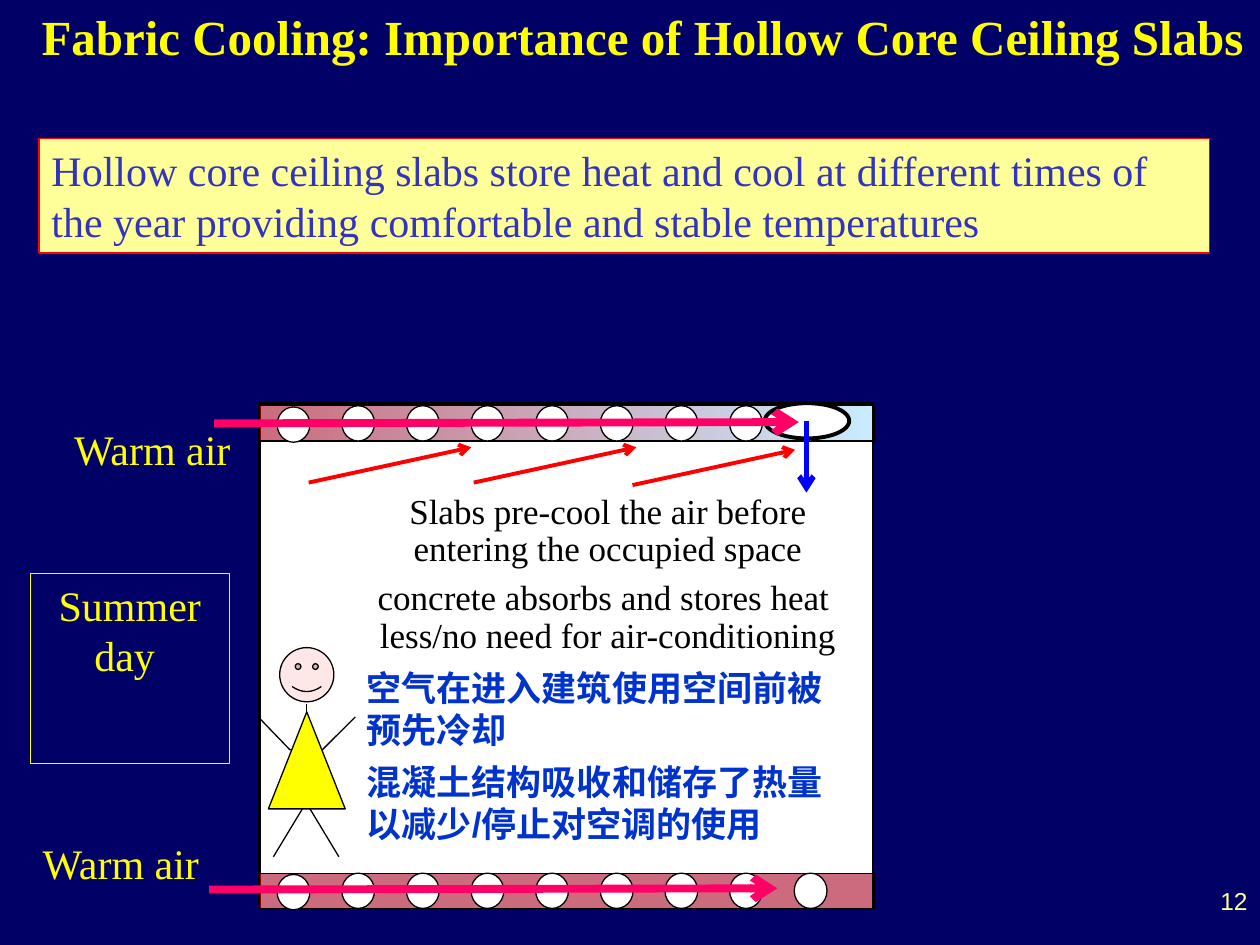
from dataclasses import dataclass
from typing import NamedTuple, Optional

from lxml.etree import SubElement
from pptx import Presentation
from pptx.dml.color import RGBColor
from pptx.enum.shapes import MSO_CONNECTOR, MSO_SHAPE as Preset
from pptx.enum.text import MSO_ANCHOR, PP_ALIGN as Align
from pptx.oxml.ns import qn
from pptx.util import Inches, Pt

COLUMNS, ROWS = 100, 75


@dataclass(frozen=True)
class Theme:
    night: str = "000066"
    yellow: str = "FFFF00"
    cream: str = "FFFF99"
    white: str = "FFFFFF"
    black: str = "000000"
    red: str = "FF0000"
    pink: str = "FF0066"
    blue: str = "0000FF"
    concrete: str = "95DCFF"
    skin: str = "FFE7E7"
    violet: str = "3235BC"
    chinese: str = "0033CC"
    serif: str = "Times New Roman"
    sans: str = "Arial"
    title: int = 28
    label: int = 24
    body: int = 20
    number: int = 14
    thin: float = 0.75


class Cell(NamedTuple):
    col: float
    row: float
    cols: float
    rows: float


class Point(NamedTuple):
    col: float
    row: float


class Flow(NamedTuple):
    start: Point
    end: Point
    color: str
    width: float
    arrow: bool = True


class Words(NamedTuple):
    text: str
    size: int
    color: str
    font: str
    bold: bool = False
    align: Align = Align.LEFT


T = Theme()
deck = Presentation()
deck.slide_width, deck.slide_height = Inches(10), Inches(7.5)
slide = deck.slides.add_slide(deck.slide_layouts[6])
slide.background.fill.solid()
slide.background.fill.fore_color.rgb = RGBColor.from_string(T.night)


def across(cols: float) -> int:
    return round(deck.slide_width * cols / COLUMNS)


def down(rows: float) -> int:
    return round(deck.slide_height * rows / ROWS)


def place(cell: Cell) -> tuple:
    return across(cell.col), down(cell.row), across(cell.cols), down(cell.rows)


def outline(item, color: str, width: float) -> None:
    item.line.color.rgb = RGBColor.from_string(color)
    item.line.width = Pt(width)


def draw(preset: Preset, cell: Cell, fill: Optional[str], line: str = T.black, width: float = T.thin):
    figure = slide.shapes.add_shape(preset, *place(cell))
    figure.shadow.inherit = False
    if fill:
        figure.fill.solid()
        figure.fill.fore_color.rgb = RGBColor.from_string(fill)
    else:
        figure.fill.background()
    outline(figure, line, width)
    return figure


def fade(figure, *opacities: int) -> None:
    fill = figure._element.spPr.find(qn("a:gradFill"))
    if fill is None:
        fill = figure._element.spPr.find(qn("a:solidFill"))
    for color, opacity in zip(fill.iter(qn("a:srgbClr")), opacities):
        SubElement(color, qn("a:alpha")).set("val", str(opacity * 1000))


def connect(flow: Flow) -> None:
    start, end = flow.start, flow.end
    wire = slide.shapes.add_connector(
        MSO_CONNECTOR.STRAIGHT, across(start.col), down(start.row), across(end.col), down(end.row))
    outline(wire, flow.color, flow.width)
    if flow.arrow:
        SubElement(wire.line._get_or_add_ln(), qn("a:tailEnd")).set("type", "arrow")
    SubElement(wire._element.spPr, qn("a:effectLst"))


def write(holder, paragraphs: list[Words], inset: Point = Point(1, 0.5),
          spacing: Optional[float] = None, before: float = 0) -> None:
    frame = holder.text_frame
    frame.word_wrap = True
    frame.vertical_anchor = MSO_ANCHOR.TOP
    frame.margin_left = frame.margin_right = across(inset.col)
    frame.margin_top = frame.margin_bottom = down(inset.row)
    for index, words in enumerate(paragraphs):
        paragraph = frame.add_paragraph() if index else frame.paragraphs[0]
        paragraph.alignment = words.align
        paragraph.space_before = Pt(before)
        if spacing and words.align == Align.CENTER:
            paragraph.line_spacing = spacing
        run = paragraph.add_run()
        run.text = words.text
        run.font.size, run.font.name, run.font.bold = Pt(words.size), words.font, words.bold
        run.font.color.rgb = RGBColor.from_string(words.color)


def text_box(cell: Cell):
    return slide.shapes.add_textbox(*place(cell))


def draw_slab(row: float, cooling: bool) -> None:
    draw(Preset.RECTANGLE, Cell(20.7, row, 48.7, 2.8), T.concrete)
    heat = draw(Preset.RECTANGLE, Cell(20.6, row, 48.7, 2.8), T.red)
    if cooling:
        heat.fill.gradient()
        heat.fill.gradient_angle = 0
        for stop, color in zip(heat.fill.gradient_stops, (T.red, T.white)):
            stop.color.rgb = RGBColor.from_string(color)
    fade(heat, 51, 50)
    for index in range(9):
        sag = 0.1 if index == 0 else 0
        draw(Preset.OVAL, Cell(22 + 5.13 * index, row + sag, 2.6, 2.8), T.white)


def draw_person() -> None:
    hip = Point(24.3, 63.7)
    for foot in (21.7, 26.9):
        connect(Flow(hip, Point(foot, 68), T.black, T.thin, False))
    head = draw(Preset.SMILEY_FACE, Cell(22.2, 51.4, 4.3, 4.3), T.skin)
    head.adjustments[0] = 0.047
    connect(Flow(Point(24.3, 57.7), Point(24.3, 55.9), T.black, T.thin, False))
    pen = slide.shapes.build_freeform(across(20.5), down(56.9))
    pen.add_line_segments(
        [(across(col), down(row)) for col, row in ((23, 59.5), (25.6, 59.5), (28.2, 56.9))], close=False)
    arms = pen.convert_to_shape()
    arms.shadow.inherit = False
    arms.fill.background()
    outline(arms, T.black, T.thin)
    draw(Preset.ISOSCELES_TRIANGLE, Cell(21.3, 56.5, 6.1, 7.7), T.yellow)


draw(Preset.RECTANGLE, Cell(20.6, 32, 48.7, 39.8), T.white, width=1.5)
draw_slab(32.2, cooling=True)
draw_slab(69.3, cooling=False)

for col, row in ((24.5, 38.3), (37.6, 38.3), (50.2, 38.5)):
    connect(Flow(Point(col, row), Point(col + 12.9, row - 2.8), T.red, 2.25))

draw_person()

write(text_box(Cell(28.9, 39.1, 38.7, 28.4)), [
    Words("Slabs pre-cool the air before entering the occupied space",
          T.body, T.black, T.serif, align=Align.CENTER),
    Words("concrete absorbs and stores heat  less/no need for air-conditioning",
          T.body, T.black, T.serif, align=Align.CENTER),
    Words("空气在进入建筑使用空间前被预先冷却", T.body, T.chinese, T.sans, True),
    Words("混凝土结构吸收和储存了热量以减少/停止对空调的使用", T.body, T.chinese, T.sans, True),
], inset=Point(0.2, 0.1), spacing=0.9, before=6)

write(draw(Preset.RECTANGLE, Cell(2.4, 45.5, 15.8, 15.1), None, T.yellow),
      [Words("Summer day ", T.label, T.yellow, T.serif, align=Align.CENTER)])
connect(Flow(Point(16.6, 70.6), Point(61.7, 70.5), T.pink, 4.5))
for col, row in ((2.4, 66), (4.9, 33.1)):
    write(text_box(Cell(col, row, 14.9, 5)), [Words("Warm air", T.label, T.yellow, T.serif)])

draw(Preset.OVAL, Cell(60.7, 32, 6.7, 2.8), T.white, width=2.25)
connect(Flow(Point(64, 33.4), Point(64, 39.1), T.blue, 3))
connect(Flow(Point(17, 33.6), Point(63.4, 33.5), T.pink, 4.5))

write(text_box(Cell(2, 0, 98, 5.7)),
      [Words("Fabric Cooling: Importance of Hollow Core Ceiling Slabs",
             T.title, T.yellow, T.serif, True, Align.CENTER)])
write(draw(Preset.RECTANGLE, Cell(3.1, 11, 92.9, 9.1), T.cream, T.red, 1),
      [Words("Hollow core ceiling slabs store heat and cool at different times of the year "
             "providing comfortable and stable temperatures", T.label, T.violet, T.serif)])
write(text_box(Cell(76.7, 69.8, 23.3, 5.2)),
      [Words("12", T.number, T.cream, T.sans, align=Align.RIGHT)])

deck.save("out.pptx")
